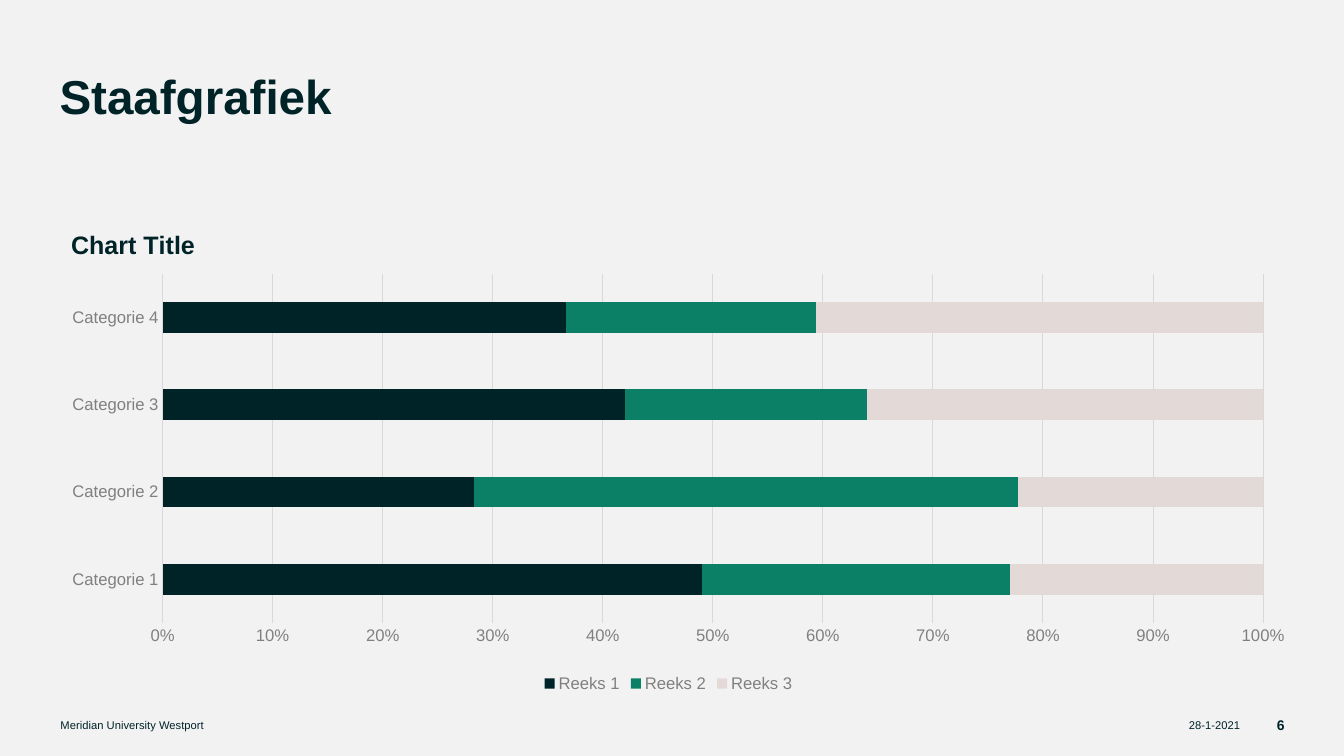
from lxml import etree
from pptx import Presentation
from pptx.chart.data import CategoryChartData
from pptx.dml.color import RGBColor
from pptx.enum.chart import XL_CHART_TYPE, XL_LEGEND_POSITION, XL_TICK_MARK
from pptx.enum.text import MSO_ANCHOR, PP_ALIGN
from pptx.oxml.ns import qn
from pptx.util import Inches, Pt

FONT = "Arial"
DARK = RGBColor(0x00, 0x23, 0x28)
GREEN = RGBColor(0x0C, 0x80, 0x66)
BLUSH = RGBColor(0xE3, 0xDA, 0xD8)
GRAY = RGBColor(0x80, 0x80, 0x80)
GRID = RGBColor(0xD9, 0xD9, 0xD9)
BACKGROUND = RGBColor(0xF2, 0xF2, 0xF2)

LEFT, RIGHT = PP_ALIGN.LEFT, PP_ALIGN.RIGHT
TOP, MIDDLE = MSO_ANCHOR.TOP, MSO_ANCHOR.MIDDLE
STACKED_100 = XL_CHART_TYPE.BAR_STACKED_100
LEGEND_BOTTOM = XL_LEGEND_POSITION.BOTTOM
NO_TICK = XL_TICK_MARK.NONE

FOOTER_TOP, FOOTER_HEIGHT = 7.12, 0.14
CATEGORIES = [f"Categorie {number}" for number in range(1, 5)]
SERIES = [
    ("Reeks 1", (49, 28, 42, 37), DARK),
    ("Reeks 2", (28, 49, 22, 23), GREEN),
    ("Reeks 3", (23, 22, 36, 41), BLUSH),
]


def set_font(font, size, color, bold=False):
    formats = {"name": FONT, "size": Pt(size), "bold": bold}
    for attribute, value in formats.items():
        setattr(font, attribute, value)
    font.color.rgb = color


def add_text(slide, text, box, size, bold=False, align=LEFT, anchor=MIDDLE,
             line_spacing=None):
    frame = slide.shapes.add_textbox(*map(Inches, box)).text_frame
    formats = {"word_wrap": True, "vertical_anchor": anchor, "margin_left": 0,
               "margin_right": 0, "margin_top": 0, "margin_bottom": 0}
    for attribute, value in formats.items():
        setattr(frame, attribute, value)
    paragraph = frame.paragraphs[0]
    paragraph.alignment = align
    paragraph.line_spacing = line_spacing
    run = paragraph.add_run()
    run.text = text
    set_font(run.font, size, DARK, bold)


def add_footer(slide, text, left, width, size=8, bold=False, align=RIGHT):
    add_text(slide, text, (left, FOOTER_TOP, width, FOOTER_HEIGHT), size, bold, align)


def manual_layout(**values):
    """Build a c:layout element with positions as fractions of the chart."""
    layout = etree.Element(qn("c:layout"))
    manual = etree.SubElement(layout, qn("c:manualLayout"))
    for tag, value in values.items():
        etree.SubElement(manual, qn(f"c:{tag}")).set("val", str(value))
    return layout


def place_plot(chart):
    plot_area = chart.plots[0]._element.getparent()
    for layout in plot_area.findall(qn("c:layout")):
        plot_area.remove(layout)
    plot_area.insert(0, manual_layout(
        layoutTarget="inner", xMode="edge", yMode="edge",
        x=0.084, y=0.119, w=0.905, h=0.728))


def add_chart_title(chart, text):
    frame = chart.chart_title.text_frame
    frame.text = text
    set_font(frame.paragraphs[0].runs[0].font, 18, DARK, bold=True)
    title = chart.chart_title._element
    for layout in title.findall(qn("c:layout")):
        title.remove(layout)
    title.find(qn("c:tx")).addnext(
        manual_layout(xMode="edge", yMode="edge", x=0.005, y=0.015))
    chart.chart_title.include_in_layout = False


def format_axis(axis):
    axis.major_tick_mark = axis.minor_tick_mark = NO_TICK
    set_font(axis.tick_labels.font, 12, GRAY)


def format_line(line):
    line.color.rgb = GRID
    line.width = Pt(0.75)


def add_bar_chart(slide):
    data = CategoryChartData()
    data.categories = CATEGORIES
    for name, values, _ in SERIES:
        data.add_series(name, values)
    box = map(Inches, (0.6, 2.15, 12.14, 4.76))
    chart = slide.shapes.add_chart(STACKED_100, *box, data).chart
    chart.font.name = FONT
    chart.font.size = Pt(10)
    add_chart_title(chart, "Chart Title")

    plot = chart.plots[0]
    plot.gap_width, plot.overlap = 182, 100
    plot.vary_by_categories = False
    for series, (_, _, color) in zip(plot.series, SERIES):
        series.format.fill.solid()
        series.format.fill.fore_color.rgb = color
    place_plot(chart)

    category_axis, value_axis = chart.category_axis, chart.value_axis
    for axis in (category_axis, value_axis):
        format_axis(axis)
    format_line(category_axis.format.line)
    format_line(value_axis.major_gridlines.format.line)
    value_axis.format.line.fill.background()
    value_axis.minimum_scale, value_axis.maximum_scale = 0, 1
    value_axis.major_unit = 0.1
    value_axis.tick_labels.number_format = "0%"
    value_axis.tick_labels.number_format_is_linked = False

    chart.has_legend = True
    chart.legend.position = LEGEND_BOTTOM
    chart.legend.include_in_layout = False
    set_font(chart.legend.font, 12, GRAY)


def main():
    presentation = Presentation()
    presentation.slide_width = Inches(13.33)
    presentation.slide_height = Inches(7.5)
    slide = presentation.slides.add_slide(presentation.slide_layouts[6])
    slide.background.fill.solid()
    slide.background.fill.fore_color.rgb = BACKGROUND

    add_text(slide, "Staafgrafiek", (0.59, 0.79, 12.15, 0.78), 34, bold=True,
             anchor=TOP, line_spacing=Pt(32))
    add_bar_chart(slide)
    add_footer(slide, "Meridian University Westport", 0.6, 10.79, align=LEFT)
    add_footer(slide, "28-1-2021", 11.54, 0.76)
    add_footer(slide, "6", 12.45, 0.29, size=10, bold=True)
    presentation.save("out.pptx")


if __name__ == "__main__":
    main()
